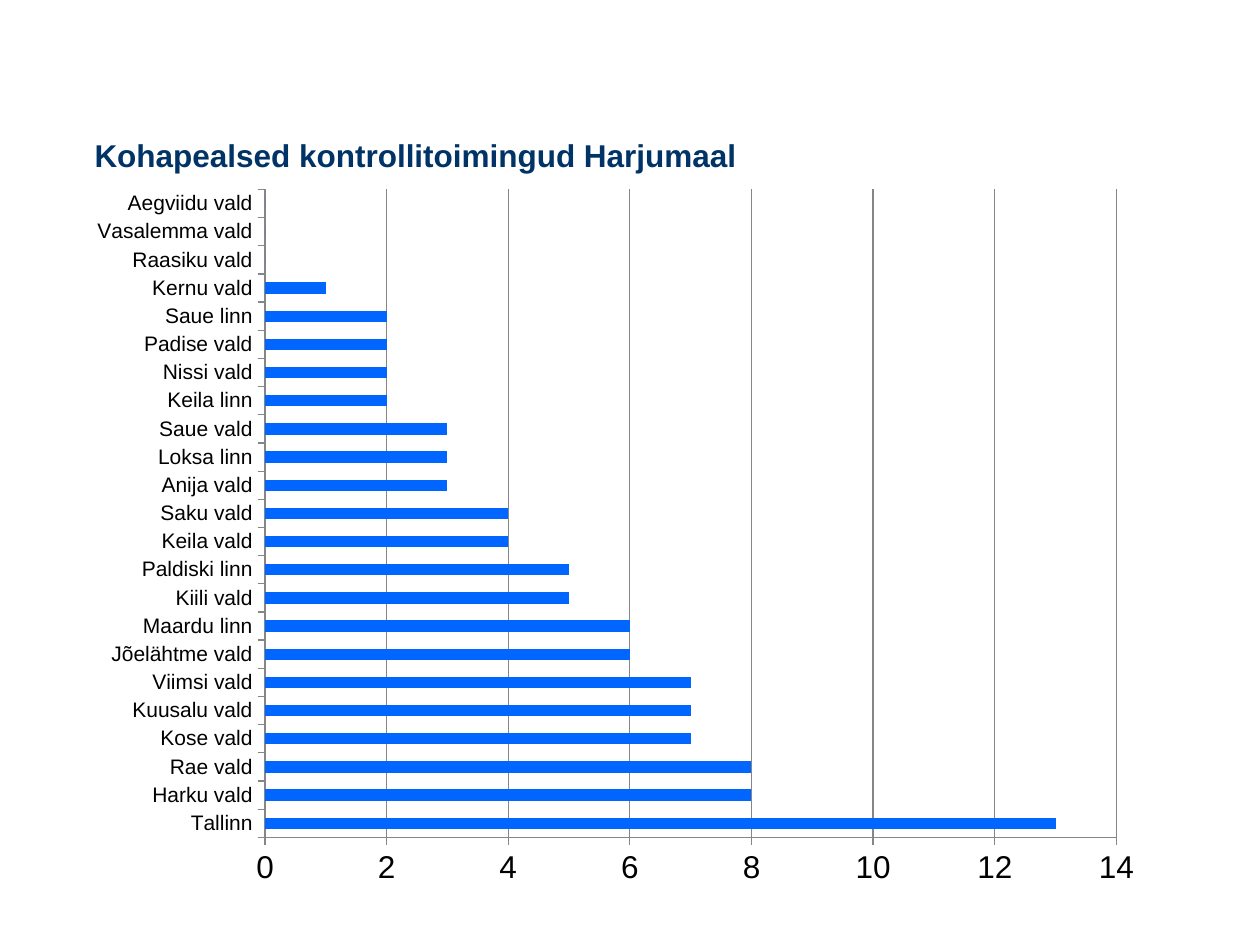
"""Build a slide with a bar chart of on-site inspections in Harjumaa."""
from lxml.etree import SubElement
from pptx import Presentation
from pptx.chart.data import CategoryChartData
from pptx.dml.color import RGBColor
from pptx.enum.chart import XL_CHART_TYPE, XL_TICK_MARK
from pptx.enum.text import MSO_ANCHOR, PP_ALIGN
from pptx.oxml.ns import qn
from pptx.util import Pt

TITLE = "Kohapealsed kontrollitoimingud Harjumaal"
INSPECTIONS = [
    ("Tallinn", 13), ("Harku vald", 8), ("Rae vald", 8), ("Kose vald", 7),
    ("Kuusalu vald", 7), ("Viimsi vald", 7), ("Jõelähtme vald", 6),
    ("Maardu linn", 6), ("Kiili vald", 5), ("Paldiski linn", 5),
    ("Keila vald", 4), ("Saku vald", 4), ("Anija vald", 3),
    ("Loksa linn", 3), ("Saue vald", 3), ("Keila linn", 2),
    ("Nissi vald", 2), ("Padise vald", 2), ("Saue linn", 2),
    ("Kernu vald", 1), ("Raasiku vald", 0), ("Vasalemma vald", 0),
    ("Aegviidu vald", 0),
]
THEME = {
    "font": "Arial", "title": "003366", "text": "000000",
    "bar": "0066FF", "line": "868686",
    "title_size": 18, "value_size": 18, "category_size": 12,
}
LEFT, WIDTH = 46.8, 612
TITLE_TOP, TITLE_H = 72, 33.12
CHART_TOP, CHART_H = TITLE_TOP + TITLE_H + 0.72, 408.24
PLOT = {"x": 0.17, "y": 0.01, "w": 0.8, "h": 0.91}
PLOT.update(x=0.171, y=0.006, w=0.795, h=0.907)


def format_font(font, size, color, bold=False):
    font.name, font.size, font.bold = THEME["font"], Pt(size), bold
    font.color.rgb = RGBColor.from_string(color)


def write_text(tf, text, size, color, bold=False, align=PP_ALIGN.LEFT):
    tf.word_wrap = True
    tf.vertical_anchor = MSO_ANCHOR.MIDDLE
    p = tf.paragraphs[0]
    p.alignment = align
    r = p.add_run()
    r.text = text
    format_font(r.font, size, color, bold)


def set_line(line):
    line.color.rgb = RGBColor.from_string(THEME["line"])
    line.width = Pt(0.75)


def place_plot(chart, plot):
    area = chart._chartSpace.chart.plotArea
    layout = area.find(qn("c:layout"))
    if layout is None:
        layout = SubElement(area, qn("c:layout"))
        area.insert(0, layout)
    manual = SubElement(layout, qn("c:manualLayout"))
    settings = [("layoutTarget", "inner"), ("xMode", "edge"), ("yMode", "edge")]
    for tag, val in settings + list(plot.items()):
        SubElement(manual, qn(f"c:{tag}")).set("val", str(val))


def add_inspections_chart(s):
    data = CategoryChartData()
    data.categories = [name for name, _ in INSPECTIONS]
    data.add_series("Series 1", [count for _, count in INSPECTIONS])
    chart = s.shapes.add_chart(
        XL_CHART_TYPE.BAR_STACKED, Pt(LEFT), Pt(CHART_TOP), Pt(WIDTH), Pt(CHART_H), data
    ).chart
    chart.has_legend = chart.has_title = False
    format_font(chart.font, THEME["value_size"], THEME["text"])
    plot = chart.plots[0]
    plot.gap_width, plot.overlap, plot.vary_by_categories = 150, 100, False
    fill = plot.series[0].format.fill
    fill.solid()
    fill.fore_color.rgb = RGBColor.from_string(THEME["bar"])
    for axis, size in (
        (chart.category_axis, THEME["category_size"]),
        (chart.value_axis, THEME["value_size"]),
    ):
        axis.major_tick_mark = XL_TICK_MARK.OUTSIDE
        axis.minor_tick_mark = XL_TICK_MARK.NONE
        format_font(axis.tick_labels.font, size, THEME["text"])
        set_line(axis.format.line)
    axis = chart.value_axis
    axis.minimum_scale, axis.maximum_scale, axis.major_unit = 0, 14, 2
    axis.has_major_gridlines = True
    set_line(axis.major_gridlines.format.line)
    place_plot(chart, PLOT)


def main():
    prs = Presentation()
    prs.slide_width, prs.slide_height = Pt(720), Pt(540)
    s = prs.slides.add_slide(prs.slide_layouts[5])
    sp = s.shapes.title
    sp.left, sp.top, sp.width, sp.height = map(Pt, (LEFT, TITLE_TOP, WIDTH, TITLE_H))
    write_text(sp.text_frame, TITLE, THEME["title_size"], THEME["title"], bold=True)
    add_inspections_chart(s)
    prs.save("out.pptx")


if __name__ == "__main__":
    main()
